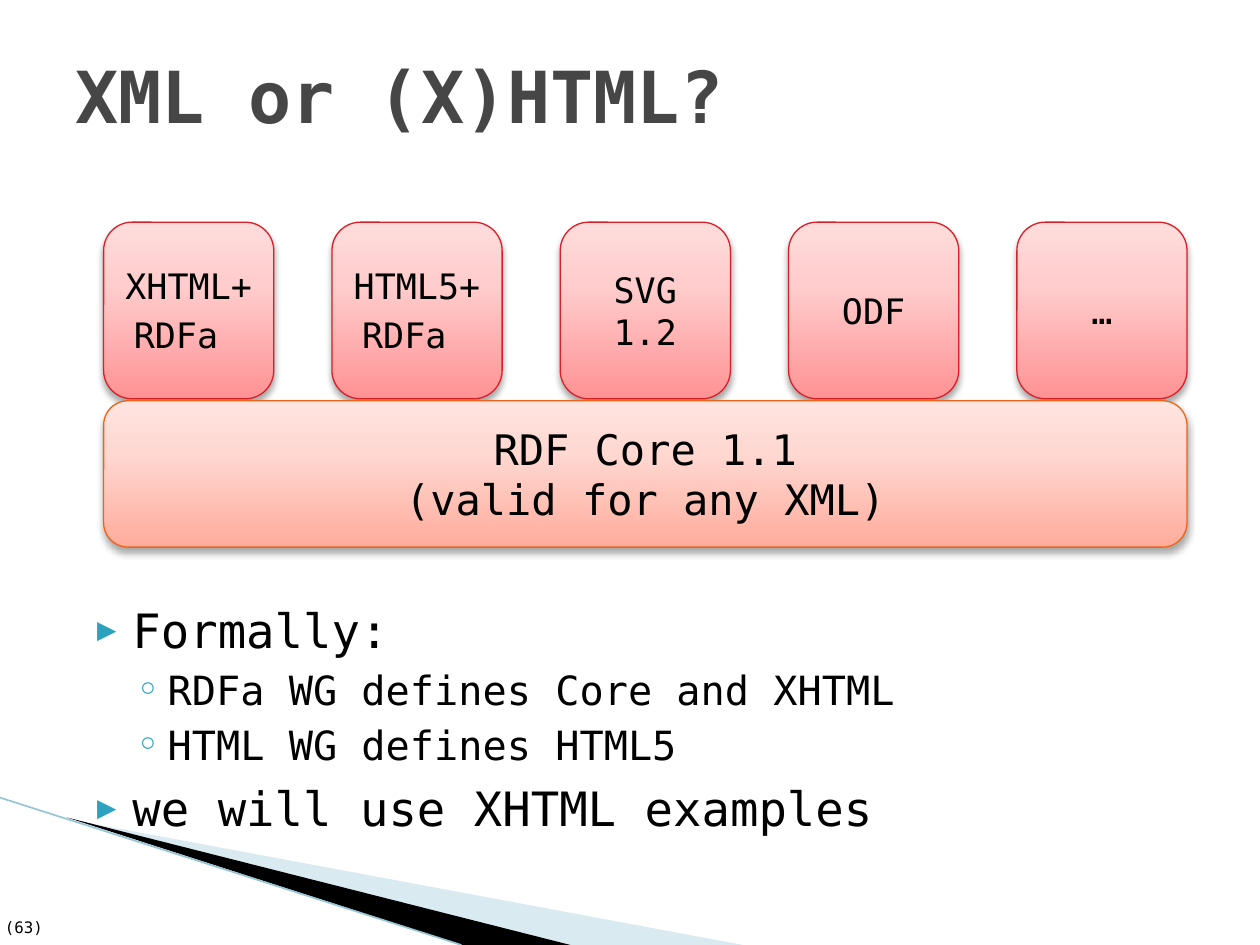
from lxml import etree
from pptx import Presentation
from pptx import oxml
from pptx import util as u
from pptx.dml.color import RGBColor
from pptx.enum import shapes, text
from pptx.oxml.ns import nsdecls, qn

BLACK = RGBColor(0x00, 0x00, 0x00)
GREY = RGBColor(0x46, 0x46, 0x46)
TEAL = RGBColor(0x2D, 0xA2, 0xBF)
PALE_BLUE = RGBColor(0xA0, 0xCB, 0xDC)
LINE_BLUE = RGBColor(0x97, 0xC5, 0xD8)
RED = RGBColor(0xDA, 0x1F, 0x28)
ORANGE = RGBColor(0xEB, 0x64, 0x1B)
# Gradient colours from bottom to top
RED_TINTS = (RGBColor(0xFF, 0x92, 0x94), RGBColor(0xFF, 0xCD, 0xCD), RGBColor(0xFF, 0xDC, 0xDC))
ORANGE_TINTS = (RGBColor(0xFF, 0xAC, 0x9C), RGBColor(0xFF, 0xD8, 0xD2), RGBColor(0xFF, 0xE4, 0xDF))


class SlideBuilder:
    """Holds the font and the current slide; one method per kind of element."""

    def __init__(self, page, font="DejaVu Sans Mono"):
        self.page = page
        self.font = font

    def add_span(self, para, wording, size, color=BLACK, bold=False):
        span = para.add_run()
        span.text = wording
        span.font.name = self.font
        span.font.size = u.Pt(size)
        span.font.bold = bold
        span.font.color.rgb = color

    def title(self, wording, left, top, width, height):
        box = self.page.shapes.title
        box.left, box.top, box.width, box.height = map(u.Cm, (left, top, width, height))
        frame = box.text_frame
        frame.vertical_anchor = text.MSO_ANCHOR.MIDDLE
        frame.auto_size = text.MSO_AUTO_SIZE.NONE
        para = frame.paragraphs[0]
        para.alignment = text.PP_ALIGN.LEFT
        self.add_span(para, wording, 41, GREY, bold=True)

    def wedge(self, points, color, opacity=100):
        corners = [(u.Cm(x), u.Cm(y)) for x, y in points]
        builder = self.page.shapes.build_freeform(*corners[0])
        builder.add_line_segments(corners[1:])
        shape = builder.convert_to_shape()
        shape.shadow.inherit = False
        shape.line.fill.background()
        shape.fill.solid()
        shape.fill.fore_color.rgb = color
        if opacity < 100:
            fill_color = shape._element.spPr.find(".//" + qn("a:srgbClr"))
            etree.SubElement(fill_color, qn("a:alpha"), val=str(opacity * 1000))

    def line(self, start, end, color, width):
        ends = map(u.Cm, (*start, *end))
        connector = self.page.shapes.add_connector(shapes.MSO_CONNECTOR.STRAIGHT, *ends)
        connector.line.color.rgb = color
        connector.line.width = u.Pt(width)
        etree.SubElement(connector._element.spPr, qn("a:effectLst"))

    def text_box(self, left, top, width, height):
        box = self.page.shapes.add_textbox(*map(u.Cm, (left, top, width, height)))
        box.text_frame.word_wrap = True
        return box.text_frame

    def block(self, lines, left, top, width, height, tints, border):
        """Rounded block; each line is a list of (wording, size) spans."""
        shape = self.page.shapes.add_shape(
            shapes.MSO_SHAPE.ROUNDED_RECTANGLE, *map(u.Cm, (left, top, width, height)))
        shape.line.color.rgb = border
        shape.line.width = u.Pt(0.75)
        # Three-stop gradient and soft shadow
        stops = "".join(f'<a:gs pos="{place}000"><a:srgbClr val="{tint}"/></a:gs>'
                        for place, tint in zip((0, 65, 100), tints))
        properties = shape._element.spPr
        properties.find(qn("a:prstGeom")).addnext(oxml.parse_xml(
            f'<a:gradFill {nsdecls("a")} rotWithShape="1"><a:gsLst>{stops}</a:gsLst>'
            '<a:lin ang="16200000" scaled="0"/></a:gradFill>'))
        shape.shadow.inherit = False
        properties.find(qn("a:effectLst")).append(oxml.parse_xml(
            f'<a:outerShdw {nsdecls("a")} blurRad="50800" dist="38100" dir="5400000" '
            'rotWithShape="0"><a:srgbClr val="000000"><a:alpha val="35000"/></a:srgbClr>'
            '</a:outerShdw>'))
        frame = shape.text_frame
        frame.vertical_anchor = text.MSO_ANCHOR.MIDDLE
        for index, spans in enumerate(lines):
            para = frame.add_paragraph() if index else frame.paragraphs[0]
            para.alignment = text.PP_ALIGN.CENTER
            for wording, size in spans:
                self.add_span(para, wording, size)

    def bullets(self, items, left, top, width, height):
        # Per level: sign, sign size %, text size, space before, margin, hanging indent
        levels = (("▶", 68, 27, 6, 1.02, 0.71), ("◦", 100, 23, 4, 1.73, 0.64))
        frame = self.text_box(left, top, width, height)
        for index, (level, wording) in enumerate(items):
            sign, percent, size, space, margin, hanging = levels[level]
            para = frame.add_paragraph() if index else frame.paragraphs[0]
            properties = para._p.get_or_add_pPr()
            properties.set("marL", str(u.Cm(margin)))
            properties.set("indent", str(-u.Cm(hanging)))
            color = etree.SubElement(properties, qn("a:buClr"))
            etree.SubElement(color, qn("a:srgbClr"), val=str(TEAL))
            etree.SubElement(properties, qn("a:buSzPct"), val=str(percent * 1000))
            etree.SubElement(properties, qn("a:buFont"), typeface=self.font)
            etree.SubElement(properties, qn("a:buChar"), char=sign)
            para.level = level
            if index:
                para.space_before = u.Pt(space)
            self.add_span(para, wording, size)


def main():
    deck = Presentation()
    deck.slide_width, deck.slide_height = u.Cm(25.4), u.Cm(19.05)
    builder = SlideBuilder(deck.slides.add_slide(deck.slide_layouts[5]))

    # Title
    builder.title("XML or (X)HTML?", 1.27, 0.64, 22.86, 2.54)

    # Corner decoration
    builder.wedge([(1.4, 16.52), (14.98, 19.05), (11.48, 19.05)], PALE_BLUE, opacity=40)
    builder.wedge([(1.35, 16.48), (11.5, 19.05), (9.32, 19.05)], BLACK)
    builder.line((0, 16.08), (9.3, 19.05), LINE_BLUE, 0.95)

    # Page number, kept whole on one line inside the slide
    number = builder.text_box(0, 18.4, 1.3, 0.6)
    number.word_wrap = False
    number.margin_left = number.margin_right = u.Cm(0.1)
    number.margin_top = number.margin_bottom = u.Cm(0.1)
    builder.add_span(number.paragraphs[0], "(63)", 9)

    # Bullet list
    builder.bullets([
        (0, "Formally:"),
        (1, "RDFa WG defines Core and XHTML"),
        (1, "HTML WG defines HTML5"),
        (0, "we will use XHTML examples"),
    ], 1.4, 12, 22.86, 5.16)

    # Host languages, spread evenly over the core
    left, core_width, width = 2.09, 21.84, 3.43
    languages = [
        [[("XHTML+RDFa", 20), (" ", 24)]],
        [[("HTML5+RDFa", 20), (" ", 24)]],
        [[("SVG", 20)], [("1.2", 20)]],
        [[("ODF", 20)]],
        [[("…", 20)]],
    ]
    step = (core_width - width) / (len(languages) - 1)
    for column, lines in enumerate(languages):
        builder.block(lines, left + column * step, 4.48, width, 3.56, RED_TINTS, RED)

    # Core
    builder.block([[("RDF Core 1.1", 24)], [("(valid for any XML)", 24)]],
                  left, 8.08, core_width, 2.95, ORANGE_TINTS, ORANGE)

    deck.save("out.pptx")


if __name__ == "__main__":
    main()
